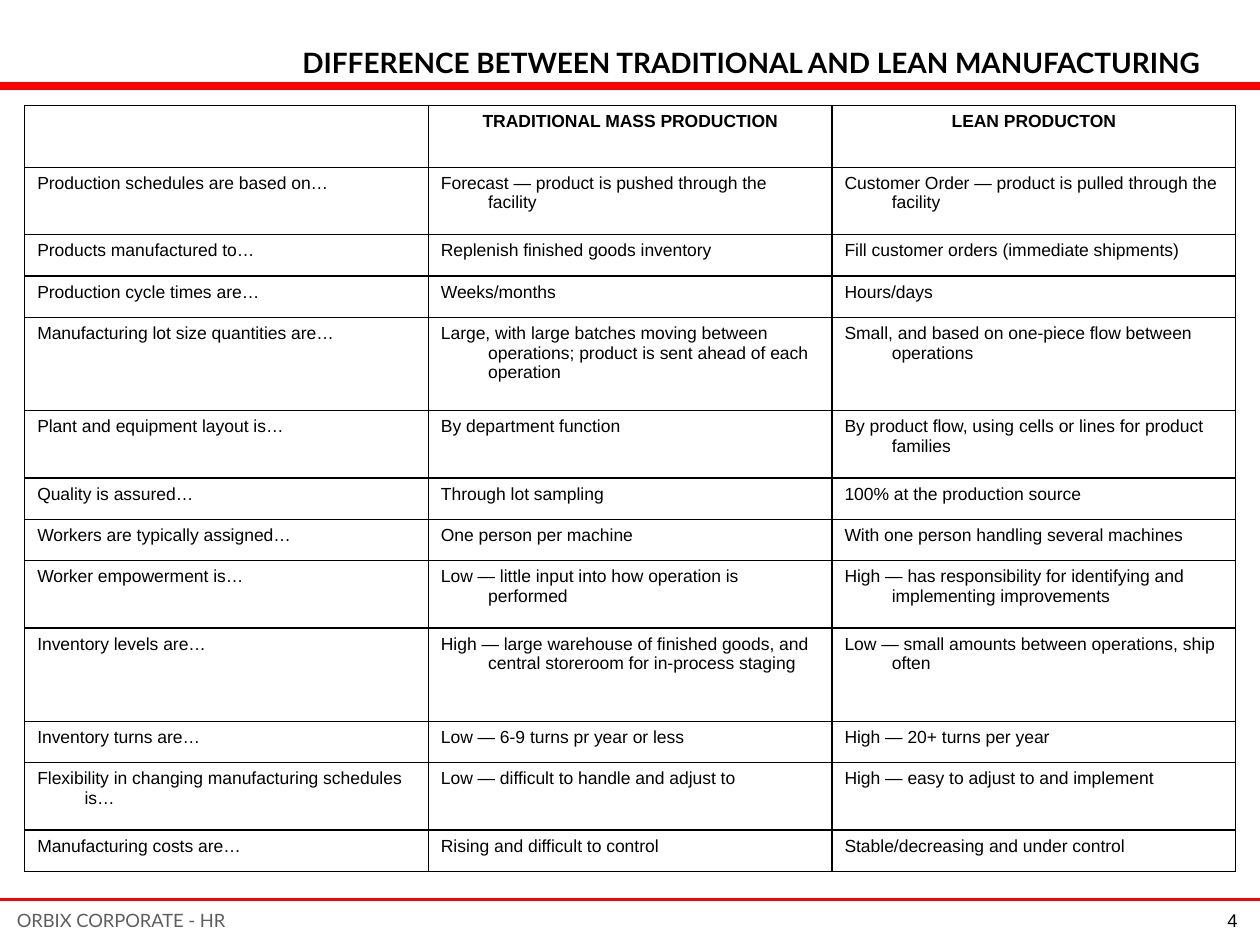
import pptx
import pptx.util
import pptx.dml.color
import pptx.enum.shapes
import pptx.enum.text
import pptx.oxml
import pptx.oxml.ns

Pt = pptx.util.Pt
Align = pptx.enum.text.PP_ALIGN
Anchor = pptx.enum.text.MSO_ANCHOR

BLACK = pptx.dml.color.RGBColor(0, 0, 0)
RED = pptx.dml.color.RGBColor(0xFF, 0, 0)
GRAY = pptx.dml.color.RGBColor(0x5E, 0x5E, 0x5E)

WIDTH, HEIGHT = 720, 540
SHORT, TWO, TALL = 23.65, 38.5, 53.3

# Each row: height, then the text of its three cells
ROWS = [
    (35.3, "", "TRADITIONAL MASS PRODUCTION", "LEAN PRODUCTON"),
    (TWO, "Production schedules are based on…",
     "Forecast — product is pushed through the facility",
     "Customer Order — product is pulled through the facility"),
    (SHORT, "Products manufactured to…", "Replenish finished goods inventory",
     "Fill customer orders (immediate shipments)"),
    (SHORT, "Production cycle times are…", "Weeks/months", "Hours/days"),
    (TALL, "Manufacturing lot size quantities are…",
     "Large, with large batches moving between operations; "
     "product is sent ahead of each operation",
     "Small, and based on one-piece flow between operations"),
    (TWO, "Plant and equipment layout is…", "By department function",
     "By product flow, using cells or lines for product families"),
    (SHORT, "Quality is assured…", "Through lot sampling",
     "100% at the production source"),
    (SHORT, "Workers are typically assigned…", "One person per machine",
     "With one person handling several machines"),
    (TWO, "Worker empowerment is…",
     "Low — little input into how operation is performed",
     "High — has responsibility for identifying and "
     "implementing improvements"),
    (TALL, "Inventory levels are…",
     "High — large warehouse of finished goods, and "
     "central storeroom for in-process staging",
     "Low — small amounts between operations, ship often"),
    (SHORT, "Inventory turns are…", "Low — 6-9 turns pr year or less",
     "High — 20+ turns per year"),
    (TWO, "Flexibility in changing manufacturing schedules is…",
     "Low — difficult to handle and adjust to",
     "High — easy to adjust to and implement"),
    (SHORT, "Manufacturing costs are…", "Rising and difficult to control",
     "Stable/decreasing and under control"),
]


class Page:
    head = "Lato"
    body = "Arial"

    def __init__(self, slide):
        self.slide = slide

    def style(self, para, font, size, color=BLACK, bold=False,
              align=Align.LEFT, hang=0):
        """Format a paragraph; hang is the hanging indent in points."""
        para.alignment = align
        if hang:
            props = para._p.get_or_add_pPr()
            props.set("marL", str(Pt(hang)))
            props.set("indent", str(-Pt(hang)))
        for run in para.runs:
            run.font.name = font
            run.font.size = Pt(size)
            run.font.bold = bold
            run.font.color.rgb = color

    def text(self, words, left, top, width, height, font, size,
             anchor=Anchor.TOP, **look):
        box = self.slide.shapes.add_textbox(
            Pt(left), Pt(top), Pt(width), Pt(height))
        frame = box.text_frame
        frame.word_wrap = True
        frame.vertical_anchor = anchor
        frame.text = words
        self.style(frame.paragraphs[0], font, size, **look)

    def rule(self, top, weight):
        """Draw a red line across the full slide."""
        line = self.slide.shapes.add_connector(
            pptx.enum.shapes.MSO_CONNECTOR.STRAIGHT,
            0, Pt(top), Pt(WIDTH), Pt(top))
        line.line.color.rgb = RED
        line.line.width = Pt(weight)
        line._element.spPr.append(
            pptx.oxml.parse_xml(
                "<a:effectLst %s/>" % pptx.oxml.ns.nsdecls("a")))

    def frame(self, cell):
        """Give a cell thin borders and no fill."""
        props = cell._tc.get_or_add_tcPr()
        for side in "LRTB":
            props.append(pptx.oxml.parse_xml(
                '<a:ln%s %s w="%d"><a:solidFill><a:srgbClr val="%s"/>'
                '</a:solidFill></a:ln%s>' % (
                    side, pptx.oxml.ns.nsdecls("a"), Pt(1), BLACK, side)))
        cell.fill.background()

    def table(self, rows, left, top, width):
        count = len(rows[0]) - 1
        total = sum(row[0] for row in rows)
        grid = self.slide.shapes.add_table(
            len(rows), count, Pt(left), Pt(top), Pt(width), Pt(total)).table
        grid.first_row = grid.horz_banding = False
        for col in grid.columns:
            col.width = Pt(width / count)
        for r, (height, *cells) in enumerate(rows):
            grid.rows[r].height = Pt(height)
            for c, words in enumerate(cells):
                cell = grid.cell(r, c)
                self.frame(cell)
                if words:
                    cell.text_frame.text = words
                    self.style(cell.text_frame.paragraphs[0], self.body, 10,
                               bold=r == 0, hang=27,
                               align=Align.LEFT if r else Align.CENTER)


def main():
    deck = pptx.Presentation()
    deck.slide_width, deck.slide_height = Pt(WIDTH), Pt(HEIGHT)
    page = Page(deck.slides.add_slide(deck.slide_layouts[6]))
    page.text("ORBIX CORPORATE - HR", 2.6, 516.2, 153.4, 20,
              page.head, 10.5, color=GRAY)
    page.rule(49, 4.5)
    page.rule(514, 2.25)
    page.text("4", 540, 516.2, 174.2, 19, page.body, 10.5,
              align=Align.RIGHT, hang=20)
    page.text("DIFFERENCE BETWEEN TRADITIONAL AND LEAN MANUFACTURING",
              144.7, 9.4, 569.5, 39.6, page.head, 16,
              anchor=Anchor.BOTTOM, bold=True, align=Align.CENTER)
    page.table(ROWS, 14.1, 60.3, 692)
    deck.save("out.pptx")


if __name__ == "__main__":
    main()
